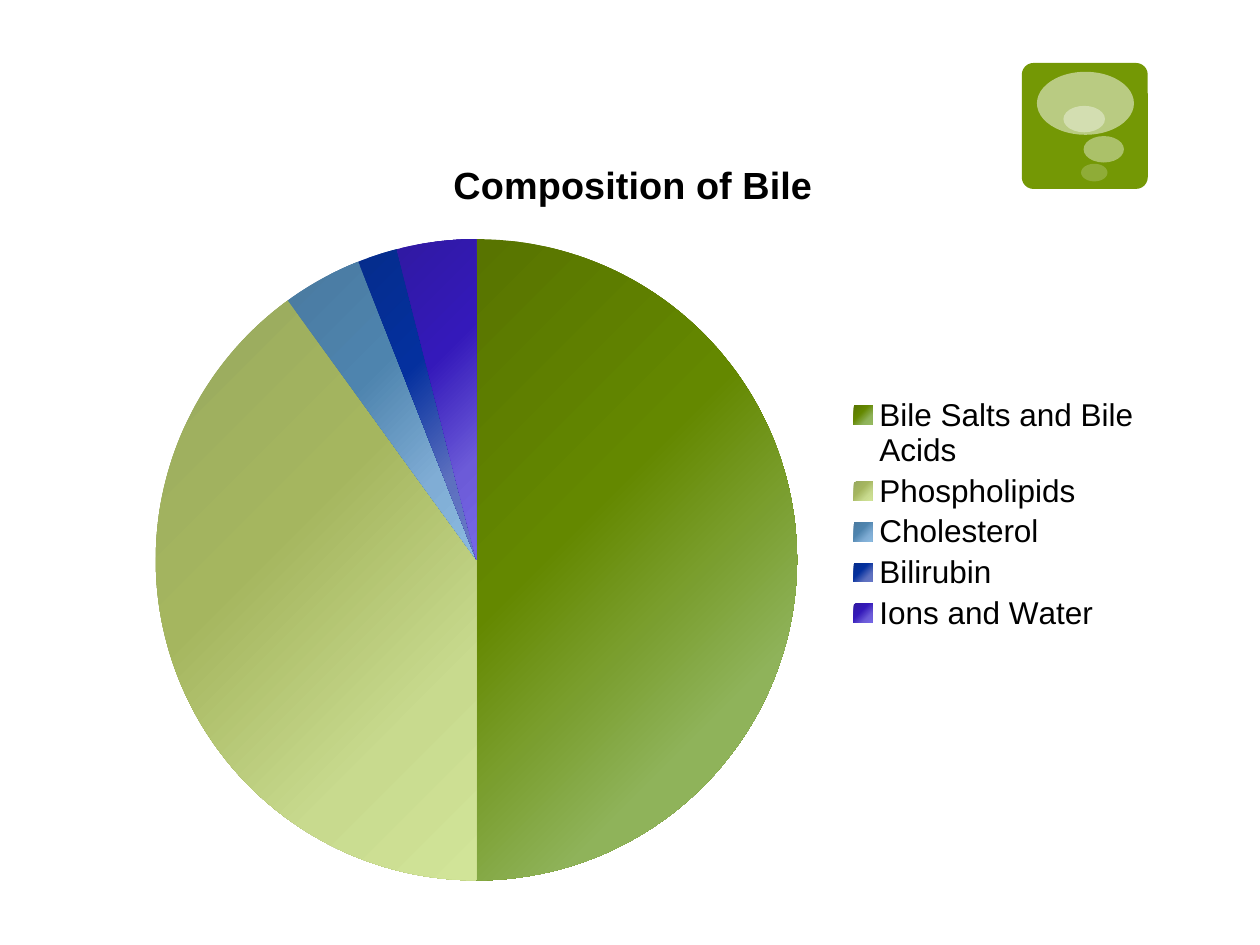
from lxml.etree import SubElement
from pptx import Presentation
from pptx.chart.data import CategoryChartData
from pptx.dml.color import RGBColor
from pptx.enum.chart import XL_CHART_TYPE, XL_LEGEND_POSITION
from pptx.enum.shapes import MSO_SHAPE
from pptx.oxml import parse_xml
from pptx.oxml.ns import nsdecls, qn
from pptx.util import Inches, Pt

TITLE = "Composition of Bile"
PARTS = [
    ("Bile Salts and Bile Acids", 50, ("587400", "648800", "8FB35A", "96BB61")),
    ("Phospholipids", 40, ("98A95F", "A5B65F", "C8DA8E", "D1E498")),
    ("Cholesterol", 4, ("4A7AA0", "4E84AE", "80ADD5", "8ABADF")),
    ("Bilirubin", 2, ("052C8C", "04309E", "5D70BF", "6878C8")),
    ("Ions and Water", 4, ("3019A2", "3419BA", "6C5BD8", "7668E6")),
]
STOP_POSITIONS = (0, 40, 75, 100)
BUBBLES = [
    (0.12, 0.07, 0.77, 0.5, 50),
    (0.49, 0.58, 0.32, 0.21, 40),
    (0.47, 0.8, 0.21, 0.14, 20),
    (0.33, 0.34, 0.33, 0.21, 38),
]


def color(value):
    return RGBColor.from_string(value)


def add_filled_shape(slide, kind, left, top, width, height, fill, alpha=100):
    shape = slide.shapes.add_shape(
        kind, Inches(left), Inches(top), Inches(width), Inches(height))
    shape.shadow.inherit = False
    shape.fill.solid()
    shape.fill.fore_color.rgb = color(fill)
    shape.line.fill.background()
    if alpha < 100:
        rgb = shape.fill._xPr.find(f"{qn('a:solidFill')}/{qn('a:srgbClr')}")
        SubElement(rgb, qn("a:alpha")).set("val", str(alpha * 1000))
    return shape


def add_bubble_badge(slide, left, top, size):
    badge = add_filled_shape(
        slide, MSO_SHAPE.ROUNDED_RECTANGLE, left, top, size, size, "749805")
    badge.adjustments[0] = 0.093
    for x, y, width, height, alpha in BUBBLES:
        add_filled_shape(slide, MSO_SHAPE.OVAL, left + x * size, top + y * size,
                         width * size, height * size, "FFFFFF", alpha)


def set_gradient(point, stops):
    properties = point._element.get_or_add_dPt_for_point(point._idx).get_or_add_spPr() \
        if hasattr(point, "_idx") and hasattr(point._element, "get_or_add_dPt_for_point") \
        else point.format.fill._xPr
    entries = "".join(
        f'<a:gs pos="{position * 1000}"><a:srgbClr val="{stop}"/></a:gs>'
        for position, stop in zip(STOP_POSITIONS, stops))
    properties.insert(0, parse_xml(
        f'<a:gradFill {nsdecls("a")} rotWithShape="1"><a:gsLst>{entries}</a:gsLst>'
        '<a:lin ang="2700000" scaled="0"/></a:gradFill>'))


def set_layout(element, successors, left, top, width, height, inner=False):
    for old in element.findall(qn("c:layout")):
        element.remove(old)
    target = '<c:layoutTarget val="inner"/>' if inner else ""
    layout = parse_xml(
        f'<c:layout {nsdecls("c")}><c:manualLayout>{target}'
        '<c:xMode val="edge"/><c:yMode val="edge"/>'
        f'<c:x val="{left}"/><c:y val="{top}"/><c:w val="{width}"/><c:h val="{height}"/>'
        '</c:manualLayout></c:layout>')
    element.insert_element_before(layout, *successors) if successors else element.insert(0, layout)


def add_composition_chart(slide, left, top, width, height):
    data = CategoryChartData()
    data.categories = [name for name, _, _ in PARTS]
    data.add_series(TITLE, [value for _, value, _ in PARTS])
    chart = slide.shapes.add_chart(
        XL_CHART_TYPE.PIE, Inches(left), Inches(top), Inches(width), Inches(height),
        data).chart
    chart.font.name = "Arial"
    chart.font.size = Pt(18)
    chart.font.color.rgb = color("000000")

    chart.has_title = True
    run = chart.chart_title.text_frame.paragraphs[0].add_run()
    run.text = TITLE
    run.font.name = "Arial"
    run.font.size = Pt(21.6)
    run.font.bold = True
    run.font.color.rgb = color("000000")

    chart.has_legend = True
    chart.legend.position = XL_LEGEND_POSITION.RIGHT
    chart.legend.include_in_layout = False
    set_layout(chart.legend._element, ("c:overlay", "c:spPr", "c:txPr"),
               0.7, 0.34, 0.29, 0.32)

    plot = chart.plots[0]
    plot.vary_by_categories = True
    set_layout(plot._element.getparent(), (), 0.04, 0.14, 0.62, 0.84, inner=True)
    for index, (_, _, stops) in enumerate(PARTS):
        set_gradient(plot.series[0].points[index], stops)


def main():
    presentation = Presentation()
    presentation.slide_width = Inches(10)
    presentation.slide_height = Inches(7.5)
    slide = presentation.slides.add_slide(presentation.slide_layouts[6])
    add_bubble_badge(slide, 8.11, 0.5, 1)
    add_composition_chart(slide, 0.88, 1.05, 8.29, 6.06)
    presentation.save("out.pptx")


if __name__ == "__main__":
    main()
